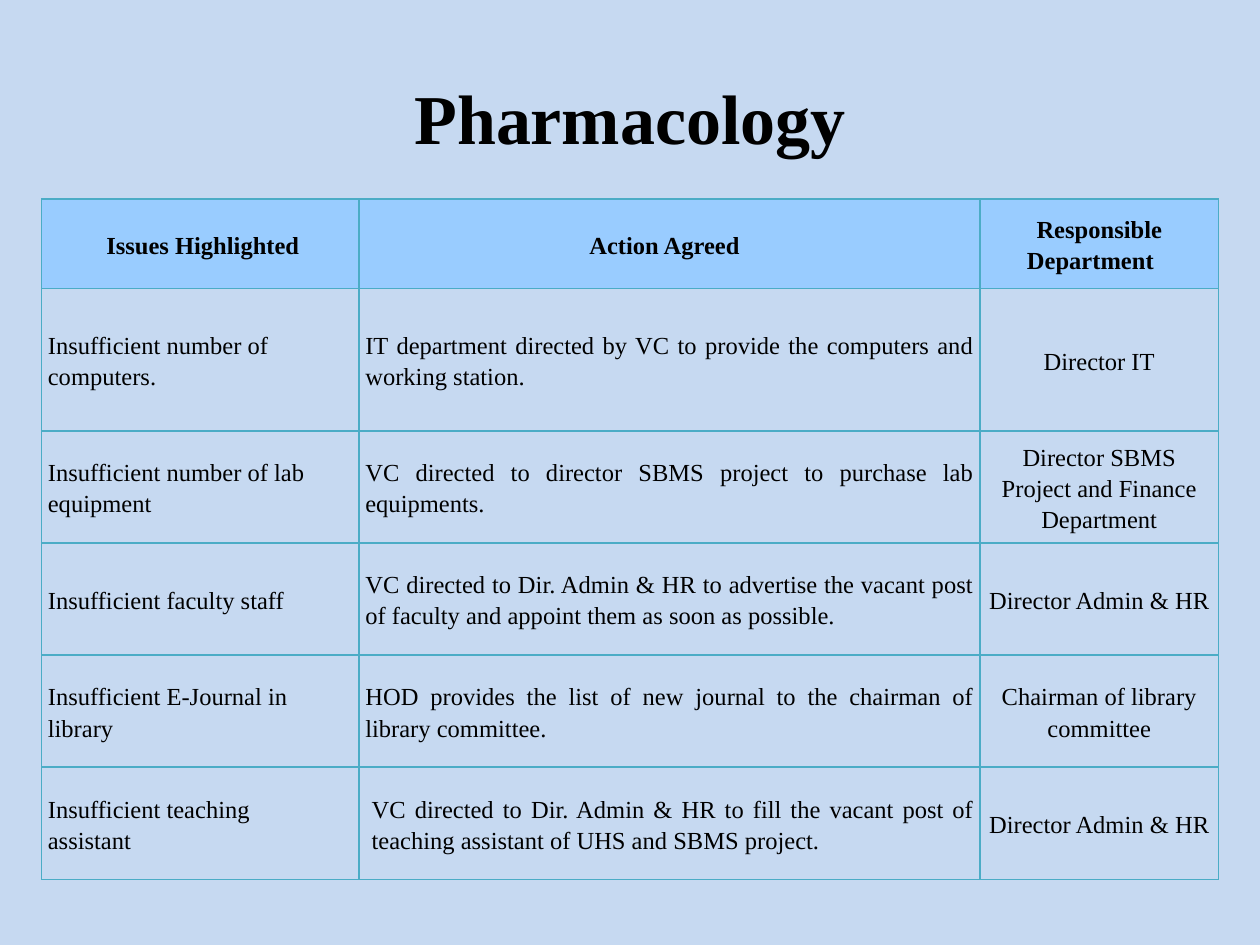
"""Build the Pharmacology slide with its table of issues and agreed actions."""
from dataclasses import dataclass

import pptx
import pptx.dml.color
import pptx.enum.text
import pptx.oxml
import pptx.oxml.ns
import pptx.util
from pptx.util import Inches

RGBColor = pptx.dml.color.RGBColor
Align = pptx.enum.text.PP_ALIGN
Anchor = pptx.enum.text.MSO_ANCHOR

BACKGROUND = RGBColor(0xC6, 0xD9, 0xF1)
HEADER_FILL = RGBColor(0x99, 0xCC, 0xFF)
BORDER = RGBColor(0x4B, 0xAC, 0xC6)
BLACK = RGBColor(0, 0, 0)
FONT = "Times New Roman"

COLUMN_WIDTHS = (2.52, 4.93, 1.89)
COLUMN_ALIGNMENTS = (Align.LEFT, Align.JUSTIFY, Align.CENTER)
ROW_HEIGHTS = (0.71, 1.13) + (0.89,) * 4


@dataclass
class Line:
    """A paragraph: (text, letter spacing in points) spans and its indents in inches."""
    spans: tuple[tuple[str, float], ...]
    left: float = 0
    right: float = 0
    before: float = 0


def plain(text: str, left: float = 0, right: float = 0) -> Line:
    """Return a line made of one normally spaced span."""
    return Line(((text, 0),), left, right)


RESPONSIBLE = Line((("Res", 0), ("p", -0.7), ("onsi", 0), ("b", -0.8), ("le", 0)),
                   left=0.27, right=0.27, before=4.2)
HEADER = (
    [plain("Issues Highlighted", 0.42, 0.38)],
    [plain("Action Agreed", 0.32, 0.4)],
    [RESPONSIBLE, plain("Department", 0.2, 0.34)],
)
ISSUES = (
    (plain("Insufficient number of computers."),
     plain("IT department directed by VC to provide the computers and working station."),
     plain("Director IT")),
    (plain("Insufficient number of lab equipment"),
     plain("VC directed to director SBMS project to purchase lab equipments."),
     plain("Director SBMS Project and Finance Department")),
    (plain("Insufficient faculty staff"),
     plain("VC directed to Dir. Admin & HR to advertise the vacant post of faculty "
           "and appoint them as soon as possible."),
     plain("Director Admin & HR")),
    (plain("Insufficient E-Journal in library"),
     plain("HOD provides the list of new journal to the chairman of library committee."),
     plain("Chairman of library committee")),
    (plain("Insufficient teaching assistant", right=0.3),
     plain("VC directed to Dir. Admin & HR to fill the vacant post of teaching "
           "assistant of UHS and SBMS project.", left=0.05),
     plain("Director Admin & HR")),
)


def add_text(para, text: str, *, size: float, bold: bool = False, spacing: float = 0) -> None:
    """Add a formatted span to a paragraph."""
    span = para.add_run()
    span.text = text
    span.font.name = FONT
    span.font.size = pptx.util.Pt(size)
    span.font.bold = bold
    span.font.color.rgb = BLACK
    if spacing:
        span.font._element.set("spc", str(round(spacing * 100)))


def add_borders(cell) -> None:
    """Draw a one-point line on each side of a cell."""
    properties = cell._tc.get_or_add_tcPr()
    for position, side in enumerate(("lnL", "lnR", "lnT", "lnB")):
        properties.insert(position, pptx.oxml.parse_xml(
            f'<a:{side} {pptx.oxml.ns.nsdecls("a")} w="12700"><a:solidFill>'
            f'<a:srgbClr val="{BORDER}"/></a:solidFill></a:{side}>'))


def fill_cell(cell, lines: list[Line], alignment, *, header: bool) -> None:
    """Write the lines into a cell and format it."""
    cell.margin_left = cell.margin_right = Inches(0.05)
    cell.margin_top = cell.margin_bottom = 0
    cell.vertical_anchor = Anchor.MIDDLE
    if header:
        cell.fill.solid()
        cell.fill.fore_color.rgb = HEADER_FILL
    else:
        cell.fill.background()
    add_borders(cell)
    for index, line in enumerate(lines):
        para = cell.text_frame.add_paragraph() if index else cell.text_frame.paragraphs[0]
        para.alignment = alignment
        para.line_spacing = 1.15
        para.space_before = pptx.util.Pt(line.before)
        properties = para._p.get_or_add_pPr()
        properties.set("marL", str(Inches(line.left)))
        properties.set("marR", str(Inches(line.right)))
        properties.set("indent", "0")
        for text, spacing in line.spans:
            add_text(para, text, size=14, bold=header, spacing=spacing)


def add_issue_table(page) -> None:
    """Add the table of issues, actions and departments."""
    frame = page.shapes.add_table(len(ROW_HEIGHTS), len(COLUMN_WIDTHS), Inches(0.33),
                                  Inches(1.58), Inches(sum(COLUMN_WIDTHS)),
                                  Inches(sum(ROW_HEIGHTS)))
    table = frame.table
    table.first_row = table.horz_banding = False
    for column, width in zip(table.columns, COLUMN_WIDTHS):
        column.width = Inches(width)
    for row, height in zip(table.rows, ROW_HEIGHTS):
        row.height = Inches(height)
    for index, lines in enumerate(HEADER):
        fill_cell(table.cell(0, index), lines, Align.CENTER, header=True)
    for number, issue in enumerate(ISSUES, start=1):
        for index, (line, alignment) in enumerate(zip(issue, COLUMN_ALIGNMENTS)):
            fill_cell(table.cell(number, index), [line], alignment, header=False)


def add_title(page, text: str) -> None:
    """Place and format the title placeholder."""
    title = page.shapes.title
    title.left, title.top = Inches(0.5), Inches(0.3)
    title.width, title.height = Inches(9), Inches(1.25)
    title.text_frame.vertical_anchor = Anchor.MIDDLE
    para = title.text_frame.paragraphs[0]
    para.alignment = Align.CENTER
    add_text(para, text, size=40, bold=True)


def main() -> None:
    """Create and save the deck."""
    deck = pptx.Presentation()
    deck.slide_width, deck.slide_height = Inches(10), Inches(7.5)
    page = deck.slides.add_slide(deck.slide_layouts.get_by_name("Title Only"))
    page.background.fill.solid()
    page.background.fill.fore_color.rgb = BACKGROUND
    add_title(page, "Pharmacology")
    add_issue_table(page)
    deck.save("out.pptx")


if __name__ == "__main__":
    main()
